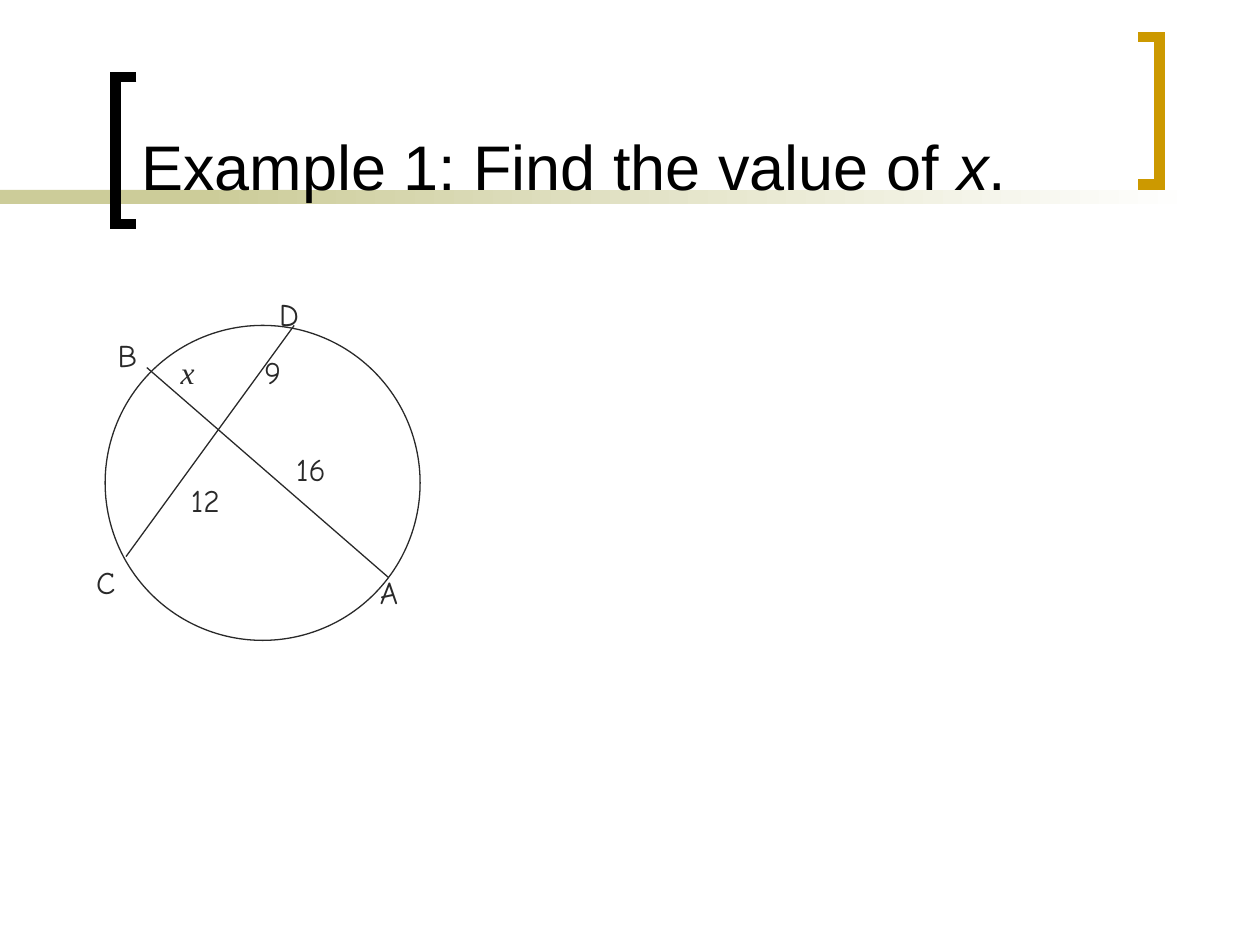
from lxml.etree import SubElement
from pptx import Presentation
from pptx.dml.color import RGBColor
from pptx.enum.shapes import MSO_CONNECTOR, MSO_SHAPE
from pptx.enum.text import MSO_ANCHOR, MSO_AUTO_SIZE, PP_ALIGN
from pptx.oxml.ns import qn
from pptx.util import Cm, Pt


def color(code):
    return RGBColor.from_string(code)


class Board:
    ink, black, gold = "292929", "000000", "CC9900"
    sand, white = "CCCC99", "FFFFFF"

    def __init__(self, deck):
        self.slide = deck.slides.add_slide(deck.slide_layouts[5])
        self.shapes = self.slide.shapes

    def band(self, left, top, width, height, fade=False):
        bar = self.shapes.add_shape(
            MSO_SHAPE.RECTANGLE, Cm(left), Cm(top), Cm(width), Cm(height))
        bar.shadow.inherit = False
        bar.line.fill.background()
        if fade:
            bar.fill.gradient()
            bar.fill.gradient_angle = 0
            for stop, code in zip(bar.fill.gradient_stops, (self.sand, self.white)):
                stop.color.rgb = color(code)
        else:
            bar.fill.solid()
            bar.fill.fore_color.rgb = color(self.sand)

    def bracket(self, tip, spine, top, height, code):
        low = top + height
        pen = self.shapes.build_freeform(Cm(tip), Cm(top))
        pen.add_line_segments(
            [(Cm(x), Cm(y)) for x, y in ((spine, top), (spine, low), (tip, low))],
            close=False)
        mark = pen.convert_to_shape()
        mark.shadow.inherit = False
        mark.fill.background()
        mark.line.color.rgb = color(code)
        mark.line.width = Pt(6)
        SubElement(mark.line._ln, qn("a:miter")).set("lim", "800000")

    def title(self, parts, left, top, width, height):
        head = self.shapes.title
        head.left, head.top = Cm(left), Cm(top)
        head.width, head.height = Cm(width), Cm(height)
        self.shapes._spTree.append(head._element)  # in front of the band
        frame = head.text_frame
        frame.auto_size = MSO_AUTO_SIZE.NONE
        frame.vertical_anchor = MSO_ANCHOR.BOTTOM
        para = frame.paragraphs[0]
        para.alignment = PP_ALIGN.LEFT
        para.font.name, para.font.size = "Arial", Pt(36)
        para.font.color.rgb = color(self.black)
        for text, slant in parts:
            run = para.add_run()
            run.text, run.font.italic = text, slant

    def circle(self, left, top, size):
        ring = self.shapes.add_shape(
            MSO_SHAPE.OVAL, Cm(left), Cm(top), Cm(size), Cm(size))
        ring.shadow.inherit = False
        ring.fill.background()
        ring.line.color.rgb = color(self.ink)
        ring.line.width = Pt(0.75)

    def chord(self, *ends):
        line = self.shapes.add_connector(
            MSO_CONNECTOR.STRAIGHT, *(Cm(v) for v in ends))
        line.line.color.rgb = color(self.ink)
        line.line.width = Pt(0.75)
        SubElement(line._element.spPr, qn("a:effectLst"))

    def label(self, text, left, top, font="Comic Neue", slant=False):
        box = self.shapes.add_textbox(Cm(left), Cm(top), Cm(1.69), Cm(1.02))
        box.text_frame.word_wrap = True
        para = box.text_frame.paragraphs[0]
        para.text = text
        para.font.name, para.font.size = font, Pt(18)
        para.font.italic = slant
        para.font.color.rgb = color(self.ink)


def main():
    deck = Presentation()
    deck.slide_width, deck.slide_height = Cm(25.4), Cm(19.05)
    board = Board(deck)

    # Band and brackets around the title
    board.band(0, 3.83, 5.93, 0.28)
    board.band(4.02, 3.83, 20.11, 0.28, fade=True)
    board.bracket(2.75, 2.33, 1.55, 2.97, board.black)
    board.bracket(22.95, 23.38, 0.75, 2.97, board.gold)
    board.title([("Example 1: Find the value of ", False), ("x", True), (".", False)],
                2.59, 0.28, 19.9, 3.94)

    # Circle with its two chords
    board.circle(2.12, 6.56, 6.35)
    board.chord(2.96, 7.41, 7.83, 11.64)
    board.chord(2.54, 11.22, 5.93, 6.56)

    # Points and lengths
    for text, left, top in (
            ("C", 1.69, 11.22), ("B", 2.12, 6.65), ("A", 7.41, 11.43),
            ("16", 5.72, 8.94), ("D", 5.38, 5.82), ("12", 3.6, 9.58),
            ("9", 5.08, 6.99)):
        board.label(text, left, top)
    board.label("x", 3.39, 6.99, "Times New Roman", True)

    deck.save("out.pptx")


if __name__ == "__main__":
    main()
